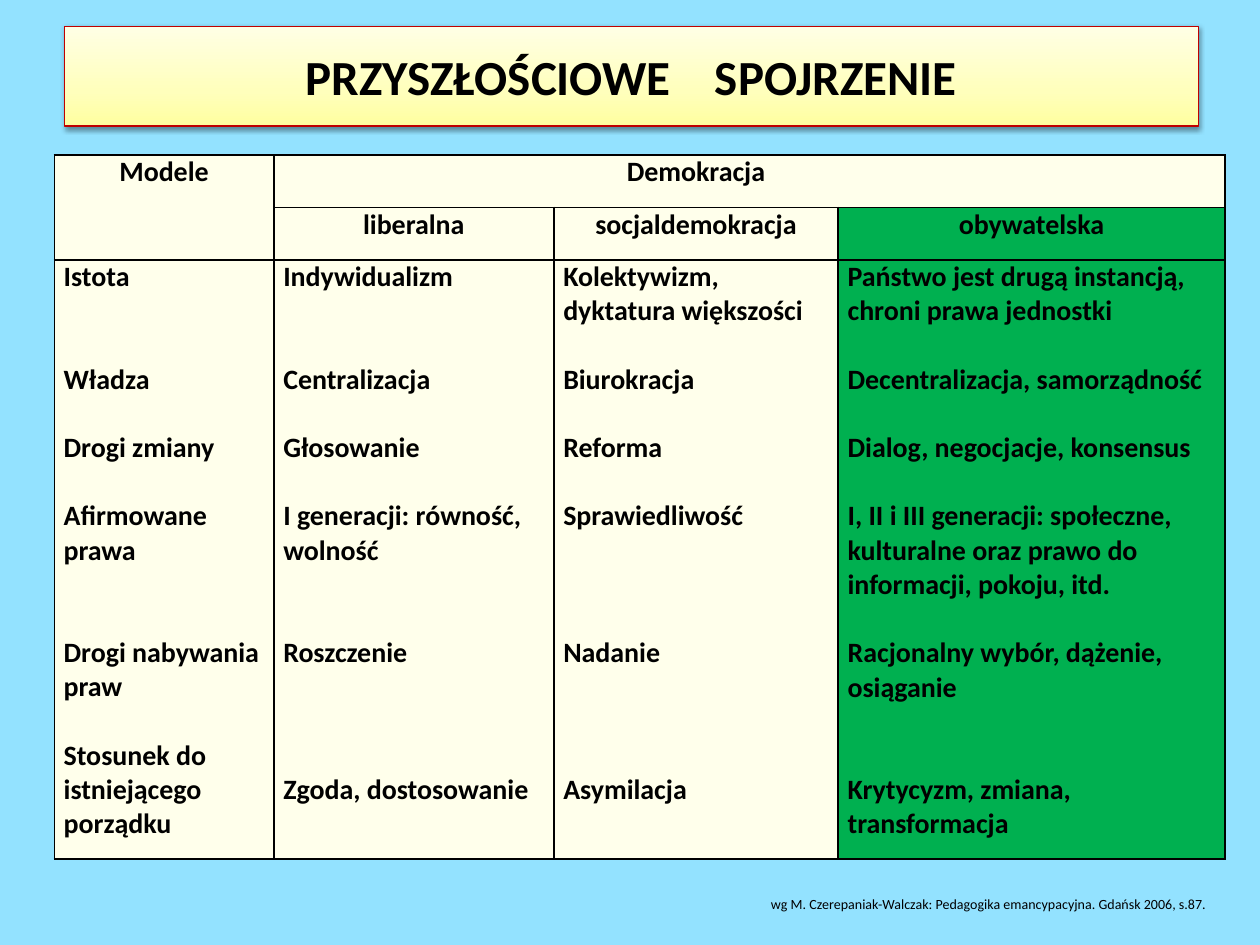
import pptx
import pptx.util
import pptx.dml.color
import pptx.enum.shapes
import pptx.enum.text
import pptx.oxml
import pptx.oxml.ns

Pt = pptx.util.Pt
CENTER = pptx.enum.text.PP_ALIGN.CENTER
LEFT = pptx.enum.text.PP_ALIGN.LEFT
MIDDLE = pptx.enum.text.MSO_ANCHOR.MIDDLE
TOP = pptx.enum.text.MSO_ANCHOR.TOP
NAMESPACE = pptx.oxml.ns.nsdecls("a")
CREAM, GREEN, BLACK = "FFFFEB", "00B050", "000000"
LINE_HEIGHT = 19.53


def color(value):
    return pptx.dml.color.RGBColor.from_string(value)


def write(paragraph, text, size, bold):
    run = paragraph.add_run()
    run.text = text
    for name, value in {"name": "Calibri", "size": Pt(size), "bold": bold}.items():
        setattr(run.font, name, value)
    run.font.color.rgb = color(BLACK)
    return run


presentation = pptx.Presentation()
presentation.slide_width = Pt(720)
presentation.slide_height = Pt(540)
slide = presentation.slides.add_slide(presentation.slide_layouts[6])
slide.background.fill.solid()
slide.background.fill.fore_color.rgb = color("93E2FF")

title = slide.shapes.add_shape(
    pptx.enum.shapes.MSO_SHAPE.RECTANGLE, Pt(36.8), Pt(15), Pt(648), Pt(57)
)
title.line.color.rgb = color("C00000")
title.line.width = Pt(0.75)
stops = "".join(
    f'<a:gs pos="{position * 1000}"><a:srgbClr val="{value}"/></a:gs>'
    for position, value in [(0, "FFFFA0"), (35, "FFFFBC"), (100, "FFFFE5")]
)
properties = title._element.spPr
properties.insert(2, pptx.oxml.parse_xml(
    f'<a:gradFill {NAMESPACE} rotWithShape="1"><a:gsLst>{stops}</a:gsLst>'
    '<a:lin ang="16200000" scaled="0"/></a:gradFill>'
))
properties.append(pptx.oxml.parse_xml(
    f'<a:effectLst {NAMESPACE}><a:outerShdw blurRad="{Pt(3.1)}" dist="{Pt(1.6)}" '
    'dir="5400000" rotWithShape="0"><a:srgbClr val="000000"><a:alpha val="38000"/>'
    '</a:srgbClr></a:outerShdw></a:effectLst>'
))
title.text_frame.vertical_anchor = MIDDLE
paragraph = title.text_frame.paragraphs[0]
paragraph.alignment = CENTER
write(paragraph, "PRZYSZŁOŚCIOWE", 28, True)
write(paragraph, " ", 28, True)._r.get_or_add_rPr().set("spc", "1900")
write(paragraph, "SPOJRZENIE", 28, True)

header_rows = [
    ["Modele", "", "Demokracja", ""],
    ["", "liberalna", "socjaldemokracja", "obywatelska"],
]
model_columns = [
    [(0, "Istota"), (2, "Władza"), (1, "Drogi zmiany"), (1, "Afirmowane prawa"),
     (2, "Drogi nabywania praw"), (1, "Stosunek do istniejącego porządku")],
    [(0, "Indywidualizm"), (2, "Centralizacja"), (1, "Głosowanie"),
     (1, "I generacji: równość, wolność"), (2, "Roszczenie"),
     (3, "Zgoda, dostosowanie")],
    [(0, "Kolektywizm, dyktatura większości"), (1, "Biurokracja"), (1, "Reforma"),
     (1, "Sprawiedliwość"), (3, "Nadanie"), (3, "Asymilacja")],
    [(0, "Państwo jest drugą instancją, chroni prawa jednostki"),
     (1, "Decentralizacja, samorządność"), (1, "Dialog, negocjacje, konsensus"),
     (1, "I, II i III generacji: społeczne, kulturalne oraz prawo do informacji, pokoju, itd."),
     (1, "Racjonalny wybór, dążenie, osiąganie"),
     (2, "Krytycyzm, zmiana, transformacja")],
]
cell_entries = [[[(0, text)] for text in row] for row in header_rows] + [model_columns]
open_edges = {(0, 0): "B", (1, 0): "T", (0, 1): "R", (0, 2): "LR", (0, 3): "L"}
cell_format = {
    "margin_left": Pt(5.4), "margin_right": Pt(5.4),
    "margin_top": 0, "margin_bottom": 0, "vertical_anchor": TOP,
}

table = slide.shapes.add_table(3, 4, Pt(31), Pt(88.5), Pt(669), Pt(402.5)).table
table.first_row = False
table.horz_banding = False
for column, width in zip(table.columns, [125.5, 160, 162.5, 221]):
    column.width = Pt(width)
for row, height in zip(table.rows, [30, 30, 342.5]):
    row.height = Pt(height)

for row_index, row_entries in enumerate(cell_entries):
    for column_index, entries in enumerate(row_entries):
        cell = table.cell(row_index, column_index)
        for name, value in cell_format.items():
            setattr(cell, name, value)
        for edge in "LRTB":
            hidden = edge in open_edges.get((row_index, column_index), "")
            paint = "<a:noFill/>" if hidden else (
                f'<a:solidFill><a:srgbClr val="{BLACK}"/></a:solidFill>'
            )
            cell._tc.get_or_add_tcPr().append(pptx.oxml.parse_xml(
                f'<a:ln{edge} {NAMESPACE} w="{Pt(1)}">{paint}</a:ln{edge}>'
            ))
        cell.fill.solid()
        is_civic = column_index == 3 and row_index > 0
        cell.fill.fore_color.rgb = color(GREEN if is_civic else CREAM)
        for entry_index, (gap_lines, text) in enumerate(entries):
            frame = cell.text_frame
            paragraph = frame.add_paragraph() if entry_index else frame.paragraphs[0]
            paragraph.alignment = CENTER if row_index < 2 else LEFT
            if gap_lines:
                paragraph.space_before = Pt(round(gap_lines * LINE_HEIGHT, 2))
            if text:
                write(paragraph, text, 16, True)

source = slide.shapes.add_textbox(Pt(433.5), Pt(508.3), Pt(272), Pt(17))
source.text_frame.word_wrap = True
write(
    source.text_frame.paragraphs[0],
    "wg M. Czerepaniak-Walczak: Pedagogika emancypacyjna. Gdańsk 2006, s.87.",
    8, False,
)

presentation.save("out.pptx")
